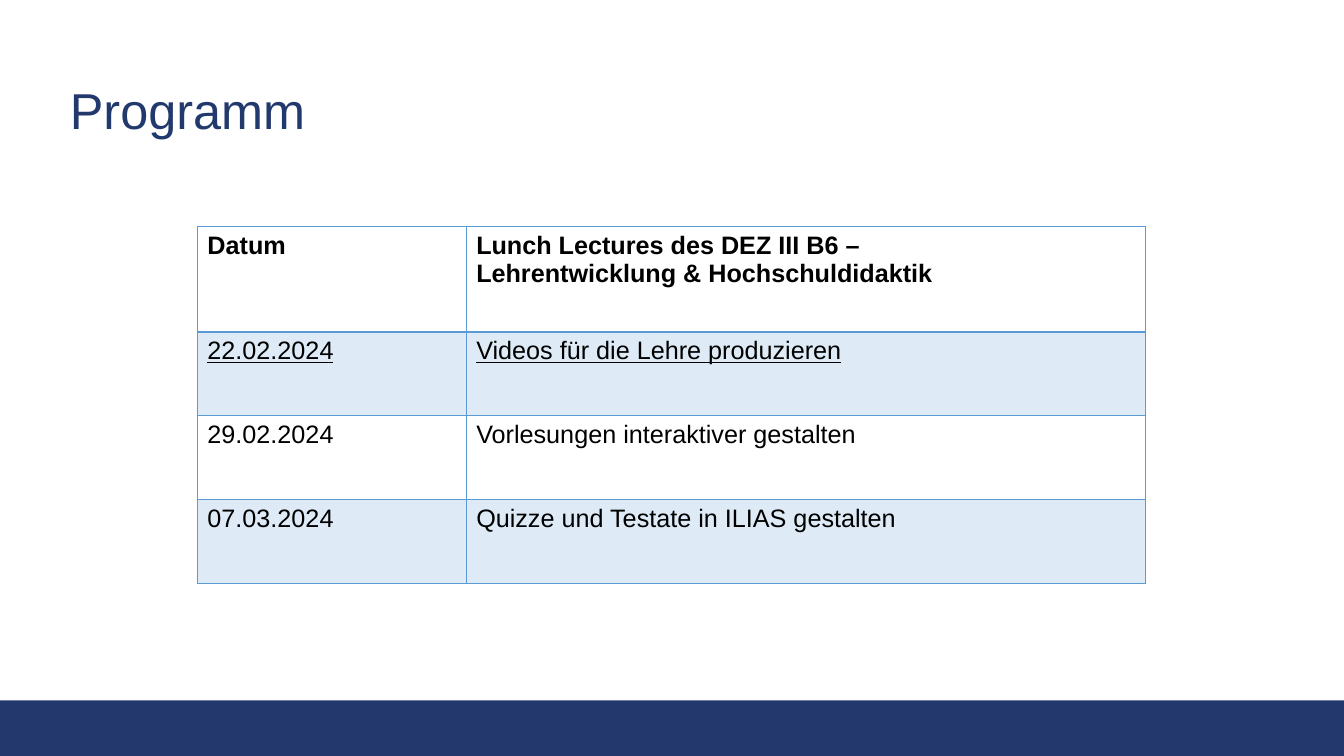
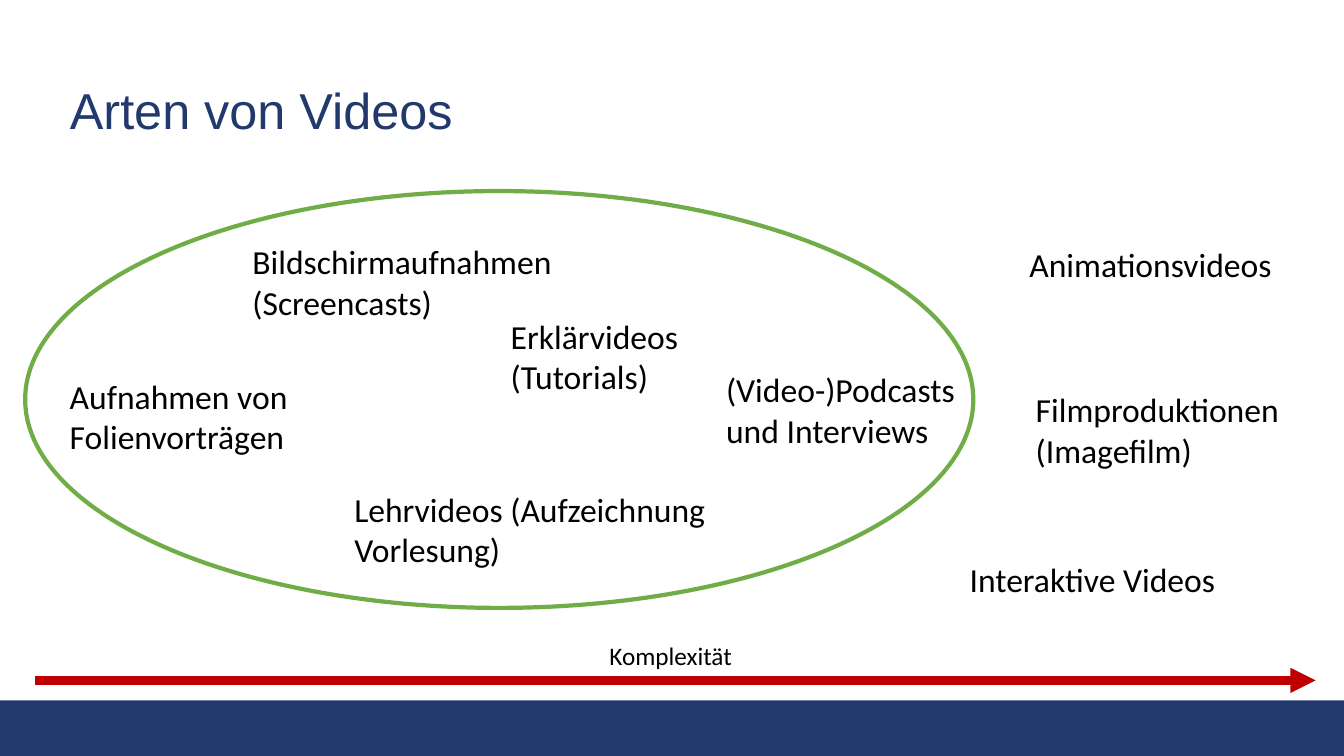
from lxml import etree
from pptx import Presentation
from pptx.dml.color import RGBColor
from pptx.enum.shapes import MSO_CONNECTOR, MSO_SHAPE
from pptx.enum.text import MSO_ANCHOR, MSO_AUTO_SIZE, PP_ALIGN
from pptx.oxml.ns import qn
from pptx.util import Pt

RECTANGLE, ELLIPSE = MSO_SHAPE.RECTANGLE, MSO_SHAPE.OVAL
STRAIGHT = MSO_CONNECTOR.STRAIGHT
LEFT, MIDDLE = PP_ALIGN.LEFT, MSO_ANCHOR.MIDDLE
FIXED_SIZE, GROW = MSO_AUTO_SIZE.NONE, MSO_AUTO_SIZE.SHAPE_TO_FIT_TEXT

BAND_BLUE = RGBColor(0x23, 0x39, 0x6E)
TITLE_BLUE = RGBColor(0x22, 0x39, 0x6E)
TABLE_BLUE = RGBColor(0x5B, 0x9B, 0xD5)
GREEN = RGBColor(0x70, 0xAD, 0x47)
RED = RGBColor(0xC0, 0x00, 0x00)
BLACK = RGBColor(0x00, 0x00, 0x00)

EMU_PER_PX = 9525
WIDTH, HEIGHT = 1280, 720
BAND_TOP = 667
TITLE_ONLY_LAYOUT = 5

TITLE_FONT = {"name": "Arial", "size": Pt(36)}
CELL_FONT = {"name": "Arial", "size": Pt(18), "bold": False}
HEADER_FONT = {**CELL_FONT, "bold": True}
CURRENT_FONT = {**CELL_FONT, "underline": True}
LABEL_FONT = {"name": "Calibri", "size": Pt(24)}
AXIS_FONT = {**LABEL_FONT, "size": Pt(18)}

PROGRAMME = [
    (HEADER_FONT, ["Datum", "Lunch Lectures des DEZ III B6 –\nLehrentwicklung & Hochschuldidaktik"]),
    (CURRENT_FONT, ["22.02.2024", "Videos für die Lehre produzieren"]),
    (CELL_FONT, ["29.02.2024", "Vorlesungen interaktiver gestalten"]),
    (CELL_FONT, ["07.03.2024", "Quizze und Testate in ILIAS gestalten"]),
]
COLUMN_WIDTHS = [256, 647]
ROW_HEIGHTS = [100, 80, 80, 80]

VIDEO_TYPES = [
    ("Bildschirmaufnahmen\n(Screencasts)", (231, 225, 315, 87)),
    ("Aufnahmen von\nFolienvorträgen", (57, 353, 262, 87)),
    ("Interaktive Videos", (914, 528, 255, 48)),
    ("Animationsvideos", (971, 228, 252, 48)),
    ("(Video-)Podcasts\nund Interviews", (682, 347, 247, 87)),
    ("Filmproduktionen\n(Imagefilm)", (977, 366, 253, 87)),
]
WRAPPED_VIDEO_TYPES = [
    ("Lehrvideos (Aufzeichnung Vorlesung)", (328, 461, 436, 87)),
    ("Erklärvideos\n(Tutorials)", (477, 296, 187, 87)),
]


def px(*lengths):
    """Turn pixel lengths into a list of EMU."""
    return [length * EMU_PER_PX for length in lengths]


def write(frame, text, font_values, color):
    """Fill a text frame, one paragraph per line of text."""
    frame.text = text
    for paragraph in frame.paragraphs:
        paragraph.alignment = LEFT
        for name, value in font_values.items():
            setattr(paragraph.font, name, value)
        paragraph.font.color.rgb = color


def draw_cell_borders(cell, header):
    properties = cell._tc.get_or_add_tcPr()
    for side in ("lnL", "lnR", "lnT", "lnB"):
        points = 2 if header and side == "lnB" else 1
        line = etree.SubElement(properties, qn(f"a:{side}"), w=str(Pt(points)))
        fill = etree.SubElement(line, qn("a:solidFill"))
        etree.SubElement(fill, qn("a:srgbClr"), val=str(TABLE_BLUE))


def tint_cell(cell, percent):
    cell.fill.solid()
    cell.fill.fore_color.rgb = TABLE_BLUE
    color = cell._tc.tcPr.find(f"{qn('a:solidFill')}/{qn('a:srgbClr')}")
    etree.SubElement(color, qn("a:alpha"), val=str(percent * 1000))


class Deck:
    def __init__(self):
        self.presentation = Presentation()
        self.presentation.slide_width, self.presentation.slide_height = px(WIDTH, HEIGHT)
        self.slide = None

    def add_slide(self, title):
        layout = self.presentation.slide_layouts[TITLE_ONLY_LAYOUT]
        self.slide = self.presentation.slides.add_slide(layout)
        band = self.add_shape(RECTANGLE, (0, BAND_TOP, WIDTH, HEIGHT - BAND_TOP))
        band.fill.solid()
        band.fill.fore_color.rgb = BAND_BLUE
        band.line.fill.background()
        shape = self.slide.shapes.title
        shape.left, shape.top, shape.width, shape.height = px(57, 38, 1166, 139)
        frame = shape.text_frame
        write(frame, title, TITLE_FONT, TITLE_BLUE)
        frame.auto_size = FIXED_SIZE
        frame.vertical_anchor = MIDDLE
        frame.paragraphs[0].line_spacing = 0.9

    def add_shape(self, kind, box):
        shape = self.slide.shapes.add_shape(kind, *px(*box))
        shape.shadow.inherit = False
        return shape

    def add_outline(self, kind, box, color, points):
        shape = self.add_shape(kind, box)
        shape.fill.background()
        shape.line.color.rgb = color
        shape.line.width = Pt(points)

    def add_label(self, text, box, font_values=LABEL_FONT, wrap=False):
        frame = self.slide.shapes.add_textbox(*px(*box)).text_frame
        write(frame, text, font_values, BLACK)
        frame.word_wrap = wrap
        frame.auto_size = GROW

    def add_arrow(self, start, end, color, points):
        arrow = self.slide.shapes.add_connector(STRAIGHT, *px(*start, *end))
        arrow.line.color.rgb = color
        arrow.line.width = Pt(points)
        properties = arrow.element.spPr
        etree.SubElement(properties.find(qn("a:ln")), qn("a:tailEnd"), type="triangle")
        etree.SubElement(properties, qn("a:effectLst"))

    def add_table(self, left, top, widths, heights, rows):
        box = px(left, top, sum(widths), sum(heights))
        table = self.slide.shapes.add_table(len(rows), len(widths), *box).table
        table.first_row = table.horz_banding = False
        for column, width in zip(table.columns, px(*widths)):
            column.width = width
        for index, (font_values, texts) in enumerate(rows):
            table.rows[index].height = px(heights[index])[0]
            for cell, text in zip(table.rows[index].cells, texts):
                write(cell.text_frame, text, font_values, BLACK)
                draw_cell_borders(cell, header=index == 0)
                if index % 2:
                    tint_cell(cell, 20)
                else:
                    cell.fill.background()


def main():
    deck = Deck()

    deck.add_slide("Programm")
    deck.add_table(188, 216, COLUMN_WIDTHS, ROW_HEIGHTS, PROGRAMME)

    deck.add_slide("Arten von Videos")
    deck.add_outline(ELLIPSE, (24, 182, 903, 397), GREEN, 3)
    for text, box in VIDEO_TYPES:
        deck.add_label(text, box)
    for text, box in WRAPPED_VIDEO_TYPES:
        deck.add_label(text, box, wrap=True)
    deck.add_arrow((33, 648), (1253, 648), RED, 6)
    deck.add_label("Komplexität", (571, 605, 137, 38), AXIS_FONT)

    deck.presentation.save("out.pptx")


if __name__ == "__main__":
    main()
